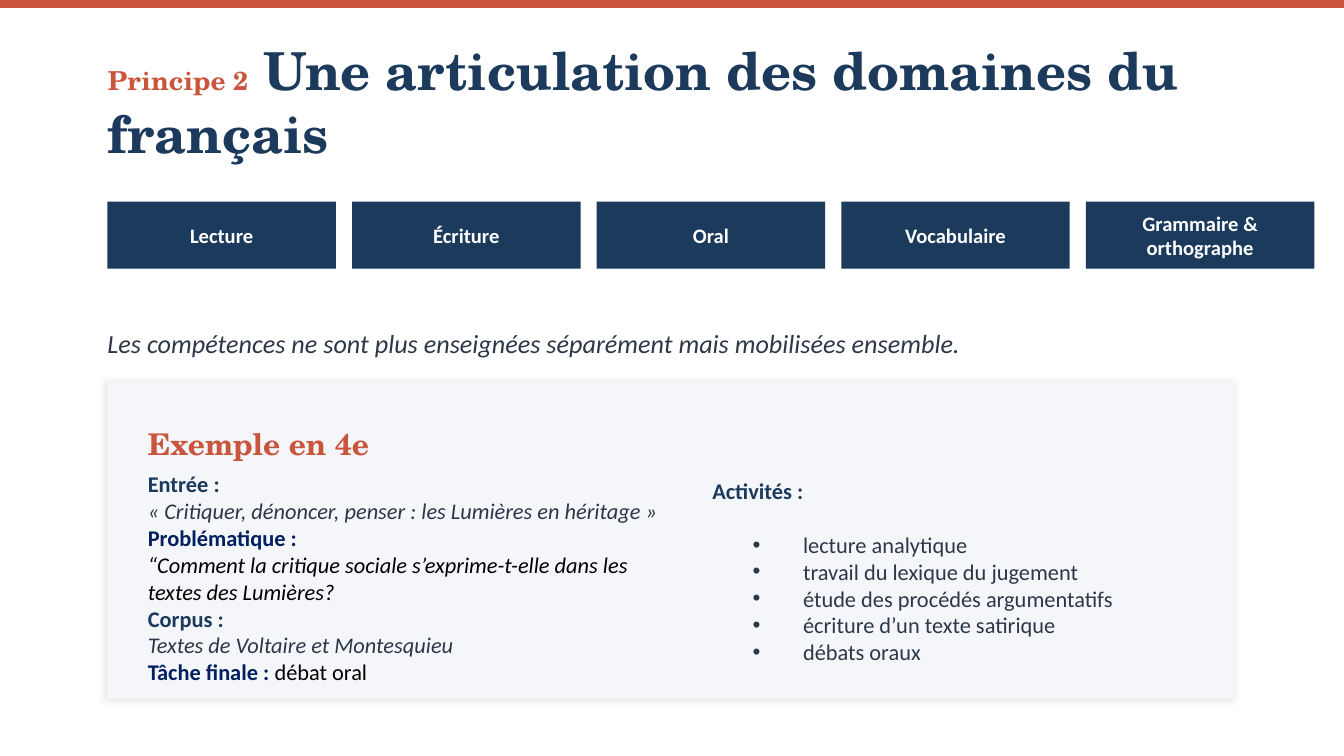
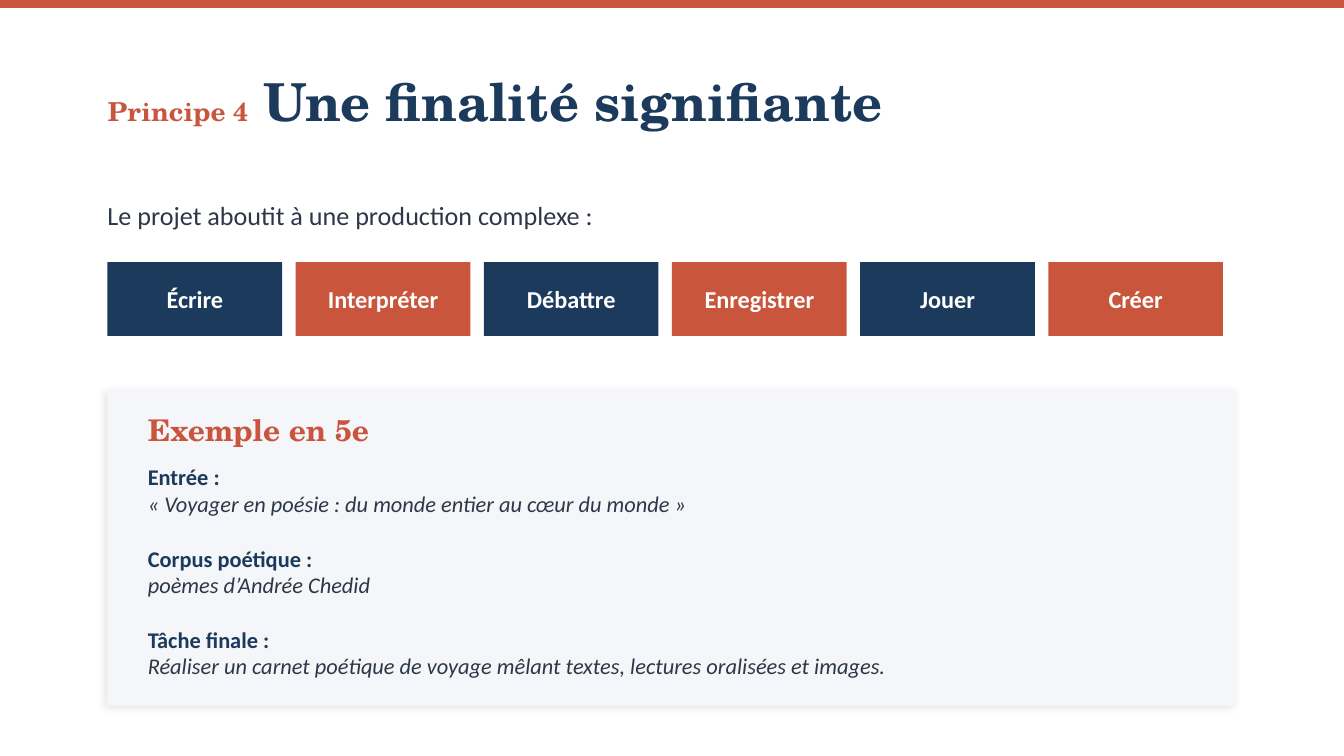
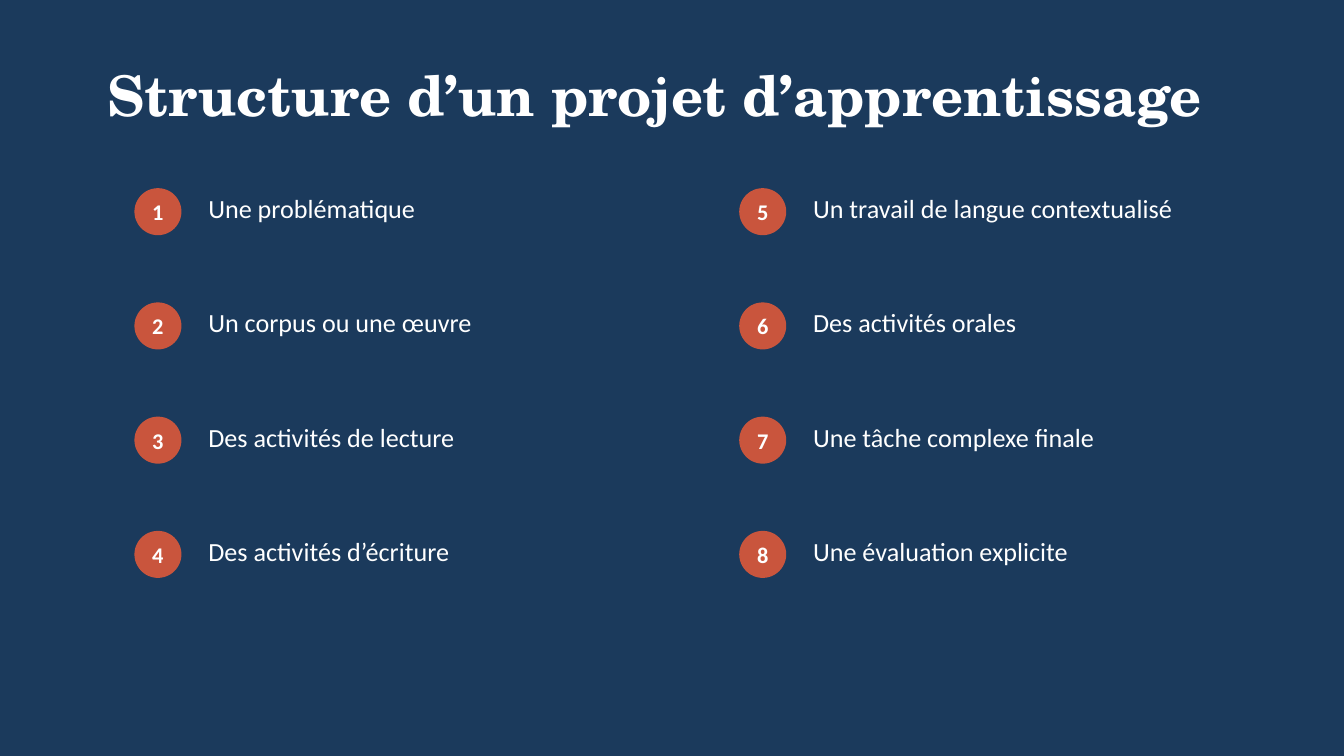
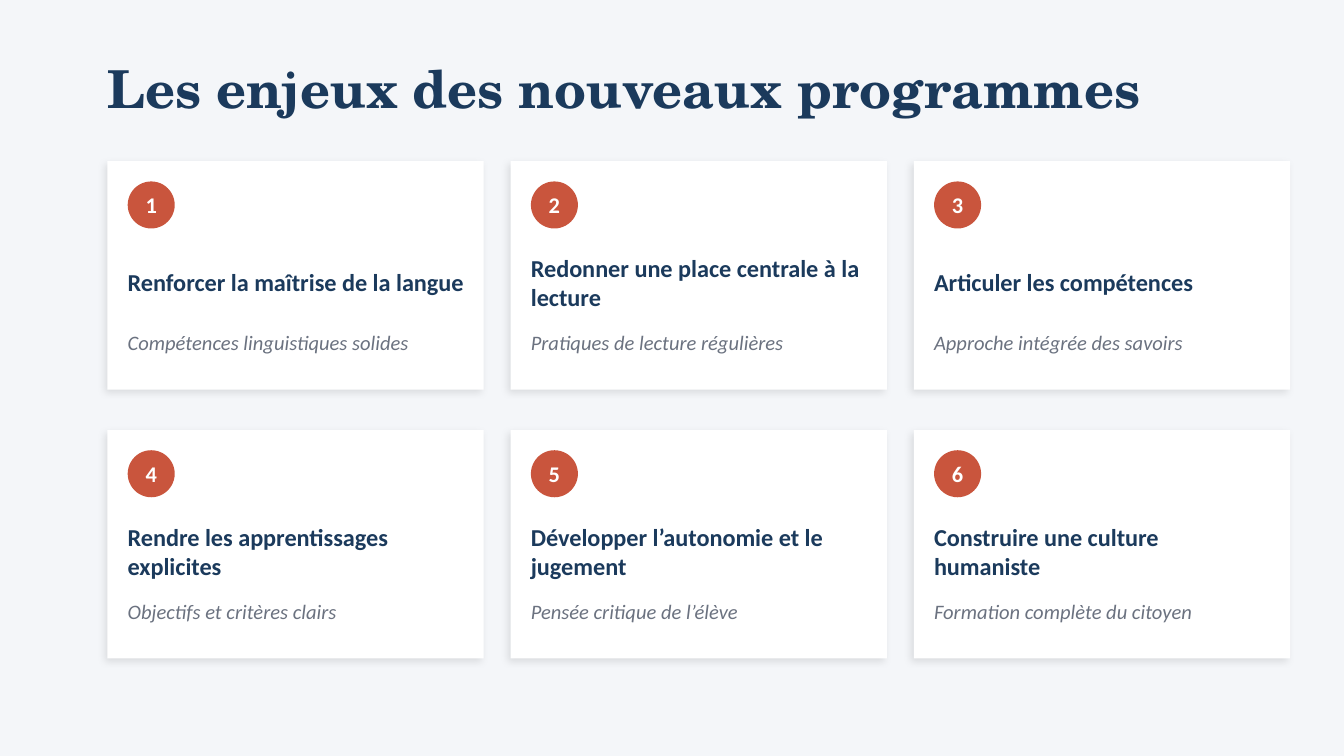
"""Build four slides on teaching French through learning projects."""
from dataclasses import dataclass

from lxml.etree import SubElement
from pptx import Presentation
from pptx.dml.color import RGBColor
from pptx.enum.shapes import MSO_SHAPE as Shape
from pptx.enum.text import MSO_ANCHOR as Anchor, MSO_AUTO_SIZE as AutoSize, PP_ALIGN as Align
from pptx.oxml.ns import qn
from pptx.util import Pt


@dataclass(frozen=True)
class Theme:
    """Colours, fonts and type sizes of the deck."""
    navy: str = "1B3A5C"
    rust: str = "C9553D"
    ink: str = "2D3748"
    deep: str = "002060"
    grey: str = "6B7280"
    pale: str = "F4F6F9"
    white: str = "FFFFFF"
    black: str = "000000"
    serif: str = "TeX Gyre Schola"
    sans: str = "Calibri"
    hero: int = 30
    title: int = 28
    heading: int = 16
    lead: int = 14
    card: int = 13
    body: int = 12
    small: int = 11


T = Theme()
LABEL = dict(color=T.navy, bold=True)
DEEP_LABEL = dict(color=T.deep, bold=True)
QUOTE = dict(color=T.ink, italic=True)
BLACK_QUOTE = dict(color=T.black, italic=True)
PLAIN = dict(color=T.black)

DOMAINS = ["Lecture", "Écriture", "Oral", "Vocabulaire", "Grammaire & orthographe"]
EXAMPLE_4E = [
    [("Entrée :", LABEL)],
    [("« Critiquer, dénoncer, penser : les Lumières en héritage »", QUOTE)],
    [("Problématique :", DEEP_LABEL)],
    [("“Comment la critique sociale s’exprime-t-elle dans les textes des Lumières?", BLACK_QUOTE)],
    [("Corpus :", LABEL)],
    [("Textes de Voltaire et Montesquieu", QUOTE)],
    [("Tâche finale : ", DEEP_LABEL), ("débat oral", PLAIN)],
]
ACTIVITIES = [
    "lecture analytique",
    "travail du lexique du jugement",
    "étude des procédés argumentatifs",
    "écriture d’un texte satirique",
    "débats oraux",
]
PRODUCTIONS = ["Écrire", "Interpréter", "Débattre", "Enregistrer", "Jouer", "Créer"]
EXAMPLE_5E = [
    [("Entrée :", LABEL)],
    [("« Voyager en poésie : du monde entier au cœur du monde »", QUOTE)],
    [("Corpus poétique :", LABEL)],
    [("poèmes d’Andrée Chedid", QUOTE)],
    [("Tâche finale :", LABEL)],
    [("Réaliser un carnet poétique de voyage mêlant textes, lectures oralisées et images.", QUOTE)],
]
STEPS = [
    "Une problématique",
    "Un corpus ou une œuvre",
    "Des activités de lecture",
    "Des activités d’écriture",
    "Un travail de langue contextualisé",
    "Des activités orales",
    "Une tâche complexe finale",
    "Une évaluation explicite",
]
STAKES = [
    ("Renforcer la maîtrise de la langue", "Compétences linguistiques solides"),
    ("Redonner une place centrale à la lecture", "Pratiques de lecture régulières"),
    ("Articuler les compétences", "Approche intégrée des savoirs"),
    ("Rendre les apprentissages explicites", "Objectifs et critères clairs"),
    ("Développer l’autonomie et le jugement", "Pensée critique de l’élève"),
    ("Construire une culture humaniste", "Formation complète du citoyen"),
]

LEFT, WIDTH = 57.6, 604.8
INDENT = 79.2
BADGE = 25.2
TITLE_ONLY, TITLE_AND_BODY = 5, 1


def points(*lengths):
    return [Pt(length) for length in lengths]


def write(shape, content, size=T.body, color=T.ink, font=T.sans, bold=False, italic=False,
          align=Align.LEFT, anchor=Anchor.MIDDLE, inset=(0, 0), wrap=True, group=0, gap=0):
    """Fill a shape with a string or with paragraphs of (text, overrides) runs."""
    frame = shape.text_frame
    frame.word_wrap, frame.auto_size = wrap, AutoSize.NONE
    frame.vertical_anchor = anchor
    frame.margin_left = frame.margin_right = Pt(inset[0])
    frame.margin_top = frame.margin_bottom = Pt(inset[1])
    paragraphs = [[(content, {})]] if isinstance(content, str) else content
    for index, runs in enumerate(paragraphs):
        paragraph = frame.add_paragraph() if index else frame.paragraphs[0]
        paragraph.alignment = align
        paragraph.space_before = Pt(gap if group and index and index % group == 0 else 0)
        for words, overrides in runs:
            style = dict(size=size, color=color, bold=bold, italic=italic) | overrides
            run = paragraph.add_run()
            run.text = words
            run.font.name, run.font.size = font, Pt(style["size"])
            run.font.bold, run.font.italic = style["bold"], style["italic"]
            run.font.color.rgb = RGBColor.from_string(style["color"])


def label(slide, box, content, **style):
    write(slide.shapes.add_textbox(*points(*box)), content, **style)


def block(slide, box, fill, kind=Shape.RECTANGLE):
    shape = slide.shapes.add_shape(kind, *points(*box))
    shape.shadow.inherit = False
    shape.fill.solid()
    shape.fill.fore_color.rgb = RGBColor.from_string(fill)
    shape.line.fill.background()
    return shape


def card(slide, box, fill):
    effects = block(slide, box, fill).element.spPr.find(qn("a:effectLst"))
    shadow = SubElement(effects, qn("a:outerShdw"), blurRad=str(Pt(4)), dist=str(Pt(2)),
                        dir=str(135 * 60000), algn="bl", rotWithShape="0")
    tint = SubElement(shadow, qn("a:srgbClr"), val=T.black)
    SubElement(tint, qn("a:alpha"), val="10000")


def badge(slide, left, top, number):
    disc = block(slide, (left, top, BADGE, BADGE), T.rust, Shape.OVAL)
    write(disc, str(number), color=T.white, bold=True, align=Align.CENTER, wrap=False)


def tiles(slide, names, top, width, height, gap, fills, size):
    for index, name in enumerate(names):
        box = (LEFT + index * (width + gap), top, width, height)
        write(block(slide, box, fills[index % len(fills)]), name, size=size, color=T.white,
              bold=True, align=Align.CENTER, inset=(7.2, 3.6))


def place(shape, box):
    shape.left, shape.top, shape.width, shape.height = points(*box)


def new_slide(deck, title, height, background=T.white, layout=TITLE_ONLY, **style):
    slide = deck.slides.add_slide(deck.slide_layouts[layout])
    slide.background.fill.solid()
    slide.background.fill.fore_color.rgb = RGBColor.from_string(background)
    place(slide.shapes.title, (LEFT, 21.6, WIDTH, height))
    write(slide.shapes.title, title,
          **dict(size=T.title, color=T.navy, font=T.serif, bold=True) | style)
    return slide


def principle_slide(deck, number, title, **options):
    runs = [(f"Principe {number}", dict(size=T.lead, color=T.rust)), (f" {title}", {})]
    slide = new_slide(deck, [runs], 64.8, **options)
    block(slide, (0, 0, 720, 4.32), T.rust)
    return slide


def example_card(slide, heading, top, height, heading_top):
    card(slide, (LEFT, top, WIDTH, height), T.pale)
    label(slide, (INDENT, heading_top, 216, 28.8), heading,
          size=T.heading, color=T.rust, font=T.serif, bold=True)


def domains_slide(deck):
    slide = principle_slide(deck, 2, "Une articulation des domaines du français",
                            layout=TITLE_AND_BODY)
    tiles(slide, DOMAINS, 108, 122.4, 36, 8.64, [T.navy], T.small)
    label(slide, (LEFT, 165.6, WIDTH, 36),
          "Les compétences ne sont plus enseignées séparément mais mobilisées ensemble.",
          size=T.lead, italic=True)
    example_card(slide, "Exemple en 4e", 203.4, 171, 223.2)
    label(slide, (INDENT, 252, 273.6, 122.4), EXAMPLE_4E, anchor=Anchor.TOP)
    label(slide, (381.6, 252, 252, 21.6), "Activités :", **LABEL)
    activities = slide.placeholders[1]
    place(activities, (396, 277.2, 237.6, 86.4))
    write(activities, [[(activity, {})] for activity in ACTIVITIES], inset=(7.2, 3.6))
    slide.shapes.element.append(activities.element)


def purpose_slide(deck):
    slide = principle_slide(deck, 4, "Une finalité signifiante")
    label(slide, (LEFT, 100.8, WIDTH, 28.8),
          "Le projet aboutit à une production complexe :", size=T.lead)
    tiles(slide, PRODUCTIONS, 140.4, 93.6, 39.6, 7.2, [T.navy, T.rust], T.card)
    example_card(slide, "Exemple en 5e", 208.8, 169.2, 216)
    label(slide, (INDENT, 248.4, 561.6, 115.2), EXAMPLE_5E, anchor=Anchor.TOP,
          group=2, gap=14.6)


def structure_slide(deck):
    slide = new_slide(deck, "Structure d’un projet d’apprentissage", 57.6, T.navy,
                      size=T.hero, color=T.white)
    for index, step in enumerate(STEPS):
        column, row = divmod(index, 4)
        left, top = 72 + 324 * column, 100.8 + 61.2 * row
        badge(slide, left, top, index + 1)
        label(slide, (left + 39.6, top - 3.6, 252, 28.8), step, size=T.lead, color=T.white)


def stakes_slide(deck):
    slide = new_slide(deck, "Les enjeux des nouveaux programmes", 50.4, T.pale)
    for index, (stake, detail) in enumerate(STAKES):
        row, column = divmod(index, 3)
        left, top = LEFT + 216 * column, 86.4 + 144 * row
        inner = left + 10.8
        card(slide, (left, top, 201.6, 122.4), T.white)
        badge(slide, inner, top + 10.8, index + 1)
        label(slide, (inner, top + 43.2, 180, 43.2), stake, size=T.card, **LABEL)
        label(slide, (inner, top + 82.8, 180, 28.8), detail,
              size=T.small, color=T.grey, italic=True)


def main():
    deck = Presentation()
    deck.slide_width, deck.slide_height = points(720, 405)
    for build in (domains_slide, purpose_slide, structure_slide, stakes_slide):
        build(deck)
    deck.save("out.pptx")


if __name__ == "__main__":
    main()
